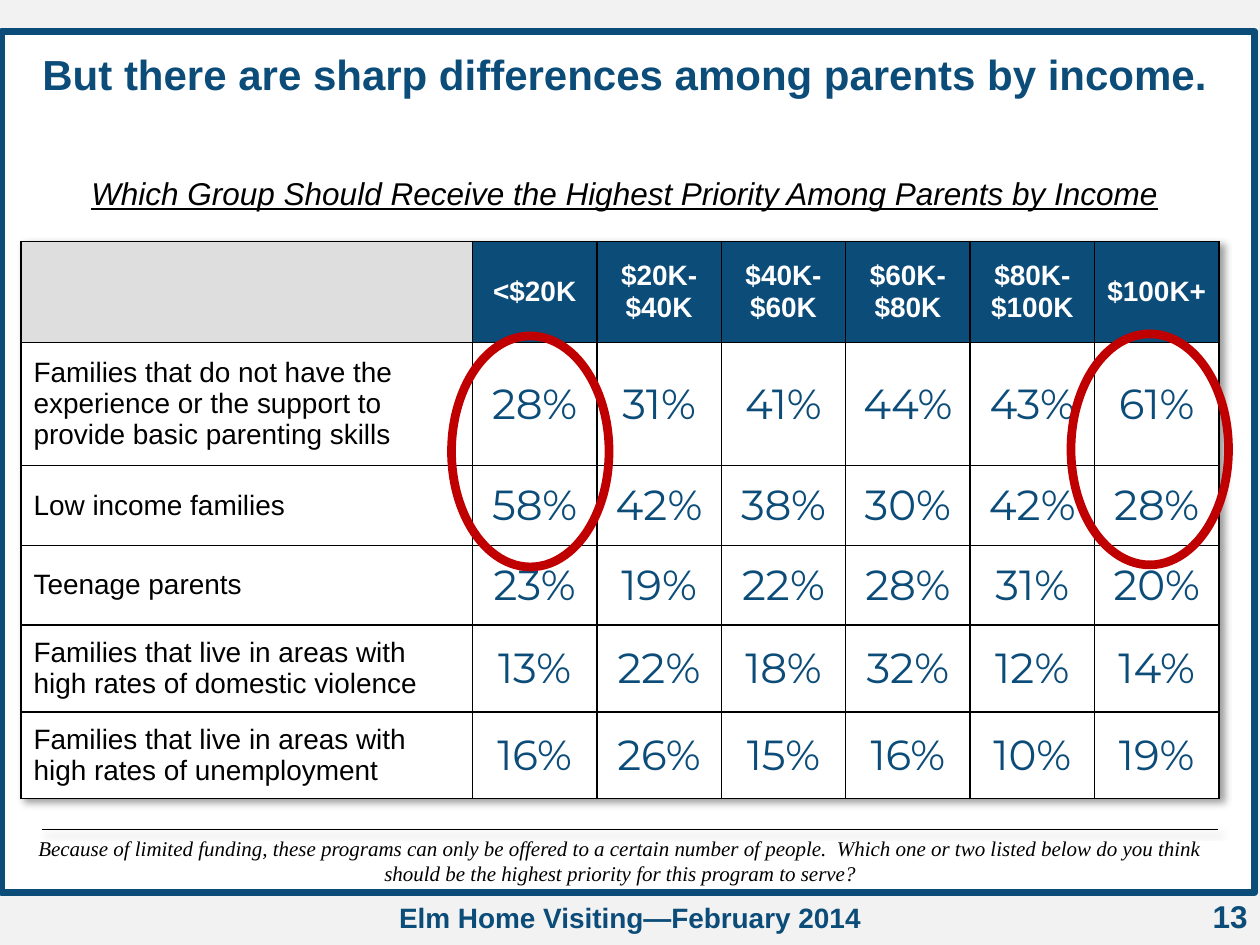
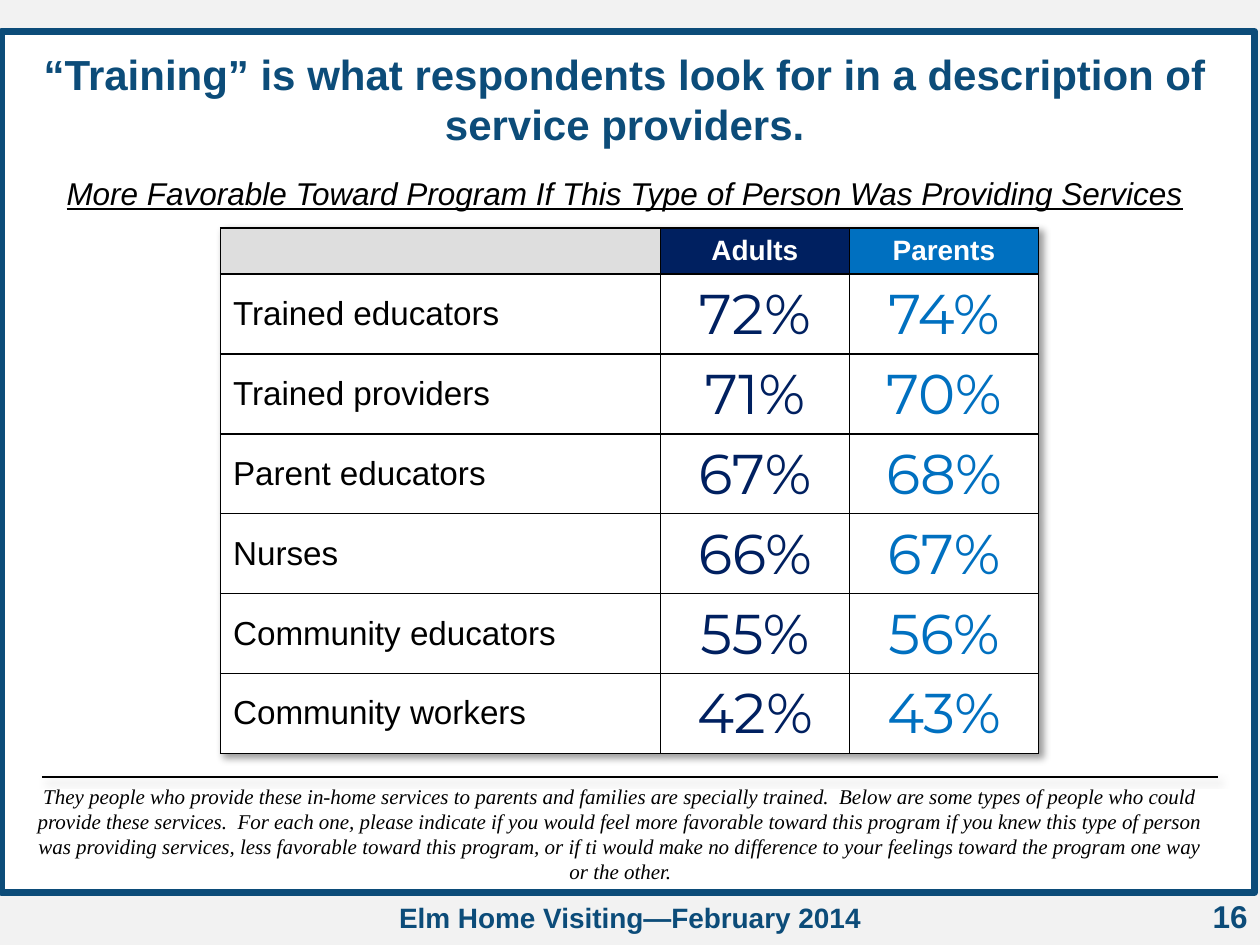
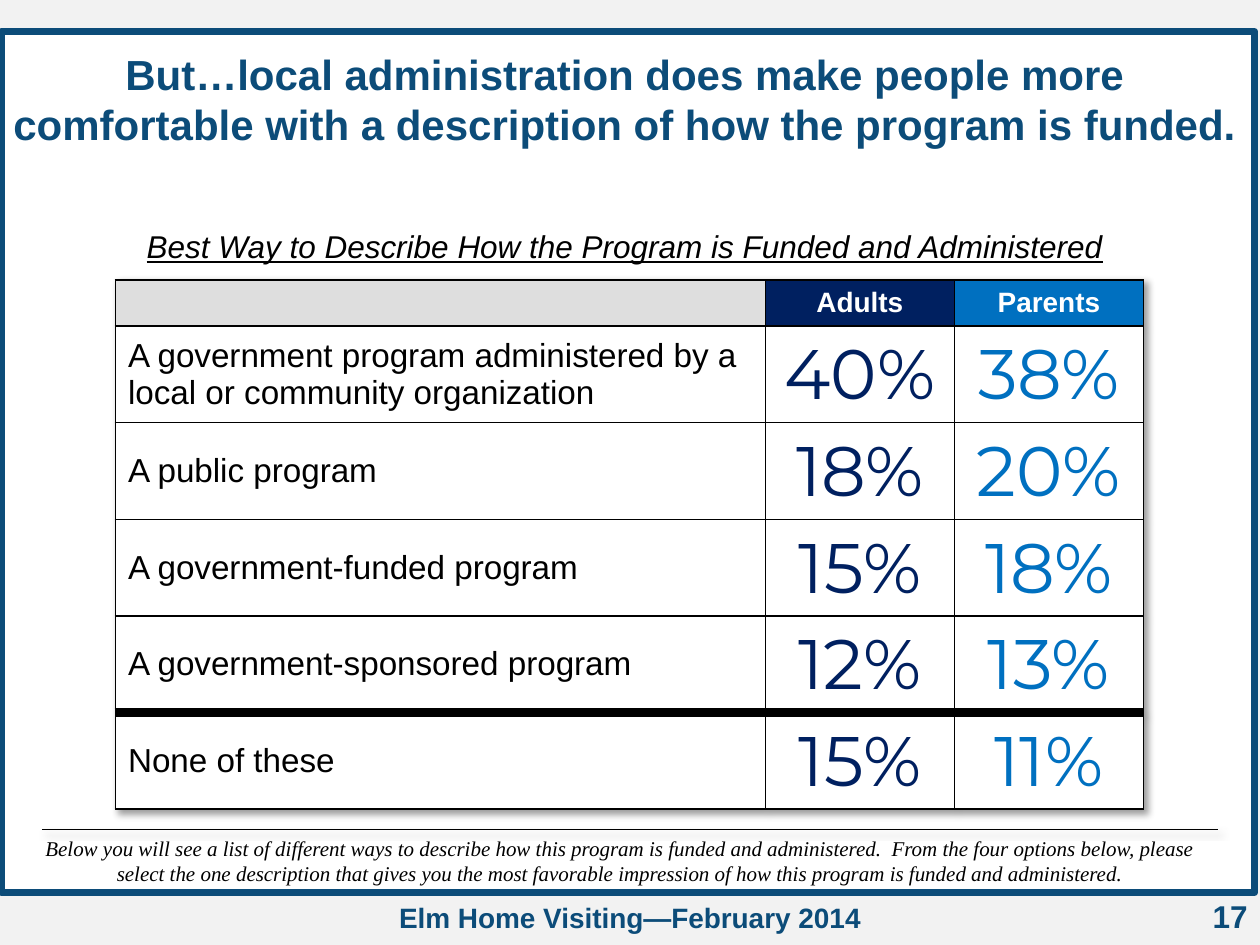
from dataclasses import dataclass
from typing import NamedTuple

from lxml.etree import SubElement
from pptx import Presentation
from pptx.dml.color import RGBColor
from pptx.enum.shapes import MSO_CONNECTOR, MSO_SHAPE
from pptx.enum.text import MSO_ANCHOR, MSO_AUTO_SIZE, PP_ALIGN
from pptx.oxml import parse_xml
from pptx.oxml.ns import nsdecls, qn
from pptx.shapes.base import BaseShape
from pptx.slide import Slide
from pptx.table import _Cell as Cell
from pptx.text.text import TextFrame
from pptx.util import Inches, Pt

GRID_UNIT = Inches(1) / 12
PAGE_COLS, PAGE_ROWS = 120, 90


def grid(units: float) -> int:
    return round(units * GRID_UNIT)


class Style(NamedTuple):
    size: float
    color: str
    face: str = "Arial"
    bold: bool = False
    italic: bool = False
    underline: bool = False
    align: PP_ALIGN = PP_ALIGN.CENTER


class Box(NamedTuple):
    col: float
    row: float
    cols: float
    rows: float

    def lengths(self) -> tuple[int, ...]:
        return tuple(grid(units) for units in self)


@dataclass(frozen=True)
class Theme:
    page: str = "F2F2F2"
    panel: str = "FFFFFF"
    brand: str = "0C4C79"
    corner: str = "DEDEDE"
    ink: str = "000000"
    adults: str = "002060"
    parents: str = "0070C0"
    highlight: str = "C00000"
    frame_line: float = 4
    thin_line: float = 1
    thick_line: float = 6
    ring_line: float = 5
    title: Style = Style(24, "0C4C79", bold=True)
    subtitle: Style = Style(18, "000000", italic=True, underline=True)
    question: Style = Style(12, "000000", "Times New Roman", italic=True)
    footer: Style = Style(16, "0C4C79", bold=True)
    page_number: Style = Style(18, "0C4C79", bold=True, align=PP_ALIGN.RIGHT)
    header: Style = Style(16, "FFFFFF", bold=True)


THEME = Theme()
FOOTER = "Elm Home Visiting—February 2014"
FRAME_BOX = Box(0.1, 3, 119.4, 82)
NUMBER_BOX = Box(92, 84.8, 28, 6.2)
FOOTER_BOX = Box(30.4, 85.2, 59.2, 4.4)


@dataclass(frozen=True)
class Group:
    name: str
    color: str


@dataclass(frozen=True)
class Answer:
    label: str
    shares: tuple[int, ...]


@dataclass(frozen=True)
class Survey:
    col: float
    row: float
    label_cols: float
    group_cols: float
    row_heights: tuple[float, ...]
    label_size: float
    share_size: float
    groups: tuple[Group, ...]
    answers: tuple[Answer, ...]
    last_apart: bool = False


@dataclass(frozen=True)
class Finding:
    number: int
    title: str
    title_rows: float
    subtitle: str
    subtitle_row: float
    question: str
    question_row: float
    question_rows: float
    survey: Survey
    rings: tuple[Box, ...] = ()


INCOMES = tuple(
    Group(name, THEME.brand)
    for name in ("<$20K", "$20K-$40K", "$40K-$60K", "$60K-$80K", "$80K-$100K", "$100K+")
)
AUDIENCES = (Group("Adults", THEME.adults), Group("Parents", THEME.parents))

FINDINGS = (
    Finding(
        13,
        "But there are sharp differences among parents by income.", 6,
        "Which Group Should Receive the Highest Priority Among Parents by Income", 16,
        "Because of limited funding, these programs can only be offered to a certain number "
        "of people.  Which one or two listed below do you think should be the highest "
        "priority for this program to serve?", 79, 6,
        Survey(
            2, 23, 43, 11.85, (9.6, 11.75, 7.6, 7.6, 8.25, 8.25), 16, 24, INCOMES,
            (
                Answer("Families that do not have the experience or the support to provide "
                       "basic parenting skills", (28, 31, 41, 44, 43, 61)),
                Answer("Low income families", (58, 42, 38, 30, 42, 28)),
                Answer("Teenage parents", (23, 19, 22, 28, 31, 20)),
                Answer("Families that live in areas with high rates of domestic violence",
                       (13, 22, 18, 32, 12, 14)),
                Answer("Families that live in areas with high rates of unemployment",
                       (16, 26, 15, 16, 10, 19)),
            ),
        ),
        (Box(43, 32, 15, 22), Box(102, 31.8, 15, 22)),
    ),
    Finding(
        16,
        "“Training” is what respondents look for in a description of service providers.", 10.9,
        "More Favorable Toward Program If This Type of Person Was Providing Services", 16,
        "They people who provide these in-home services to parents and families are specially "
        "trained.  Below are some types of people who could provide these services.  For each "
        "one, please indicate if you would feel more favorable toward this program if you knew "
        "this type of person was providing services, less favorable toward this program, or if "
        "ti would make no difference to your feelings toward the program one way or the other.",
        74, 10.9,
        Survey(
            21, 21.7, 41.9, 18, (4.4,) + (7.6,) * 6, 19, 32, AUDIENCES,
            (
                Answer("Trained educators", (72, 74)),
                Answer("Trained providers", (71, 70)),
                Answer("Parent educators", (67, 68)),
                Answer("Nurses", (66, 67)),
                Answer("Community educators", (55, 56)),
                Answer("Community workers", (42, 43)),
            ),
        ),
    ),
    Finding(
        17,
        "But…local administration does make people more comfortable with a description of how "
        "the program is funded.", 10.9,
        "Best Way to Describe How the Program is Funded and Administered", 21,
        "Below you will see a list of different ways to describe how this program is funded "
        "and administered.  From the four options below, please select the one description "
        "that gives you the most favorable impression of how this program is funded and "
        "administered.", 79, 6,
        Survey(
            11, 26.65, 61.9, 18, (4.4,) + (9.2,) * 5, 19, 40, AUDIENCES,
            (
                Answer("A government program administered by a local or community organization",
                       (40, 38)),
                Answer("A public program", (18, 20)),
                Answer("A government-funded program", (15, 18)),
                Answer("A government-sponsored program", (12, 13)),
                Answer("None of these", (15, 11)),
            ),
            last_apart=True,
        ),
    ),
)


def rgb(color: str) -> RGBColor:
    return RGBColor.from_string(color)


def write(frame: TextFrame, text: str, style: Style) -> None:
    frame.text = text
    paragraph = frame.paragraphs[0]
    paragraph.alignment = style.align
    font = paragraph.font
    font.name, font.size = style.face, Pt(style.size)
    font.bold, font.italic, font.underline = style.bold, style.italic, style.underline
    font.color.rgb = rgb(style.color)


def add_text(slide: Slide, box: Box, text: str, style: Style) -> None:
    frame = slide.shapes.add_textbox(*box.lengths()).text_frame
    frame.word_wrap = True
    write(frame, text, style)


def add_title(slide: Slide, text: str, rows: float) -> None:
    title = slide.shapes.title
    title.left, title.top, title.width, title.height = Box(0, 4, 119, rows).lengths()
    frame = title.text_frame
    frame.auto_size = MSO_AUTO_SIZE.NONE
    frame.vertical_anchor = MSO_ANCHOR.TOP
    write(frame, text, THEME.title)


def add_outline(slide: Slide, preset: MSO_SHAPE, box: Box, color: str, width: float) -> BaseShape:
    outline = slide.shapes.add_shape(preset, *box.lengths())
    outline.shadow.inherit = False
    outline.fill.background()
    outline.line.color.rgb = rgb(color)
    outline.line.width = Pt(width)
    return outline


def add_page_frame(slide: Slide, number: int) -> None:
    frame = add_outline(slide, MSO_SHAPE.ROUNDED_RECTANGLE, FRAME_BOX, THEME.brand, THEME.frame_line)
    frame.adjustments[0] = 0
    frame.fill.solid()
    frame.fill.fore_color.rgb = rgb(THEME.panel)
    slide.shapes.title.element.addprevious(frame.element)
    add_text(slide, NUMBER_BOX, str(number), THEME.page_number)
    add_text(slide, FOOTER_BOX, FOOTER, THEME.footer)


def shadow_effect():
    return parse_xml(
        f'<a:effectLst {nsdecls("a")}><a:outerShdw blurRad="{Pt(4)}" dist="{Pt(3)}" '
        f'dir="2700000" algn="tl" rotWithShape="0"><a:srgbClr val="{THEME.ink}">'
        '<a:alpha val="40000"/></a:srgbClr></a:outerShdw></a:effectLst>'
    )


def add_question(slide: Slide, finding: Finding) -> None:
    row = grid(finding.question_row)
    rule = slide.shapes.add_connector(MSO_CONNECTOR.STRAIGHT, grid(4), row, grid(116), row)
    rule.line.color.rgb = rgb(THEME.ink)
    rule.line.width = Pt(THEME.thin_line)
    rule.element.spPr.append(shadow_effect())
    box = Box(2, finding.question_row, 114.2, finding.question_rows)
    add_text(slide, box, finding.question, THEME.question)


def set_borders(cell: Cell, top: float, bottom: float) -> None:
    properties = cell._tc.get_or_add_tcPr()
    widths = {"L": THEME.thin_line, "R": THEME.thin_line, "T": top, "B": bottom}
    for position, (side, width) in enumerate(widths.items()):
        border = SubElement(properties, qn(f"a:ln{side}"), w=str(Pt(width)))
        fill = SubElement(border, qn("a:solidFill"))
        SubElement(fill, qn("a:srgbClr"), val=THEME.ink)
        properties.insert(position, border)


def fill_cell(cell: Cell, text: str, style: Style, fill: str) -> None:
    cell.fill.solid()
    cell.fill.fore_color.rgb = rgb(fill)
    cell.vertical_anchor = MSO_ANCHOR.MIDDLE
    if not text:
        cell.margin_top = cell.margin_bottom = 0
    write(cell.text_frame, text, style)


def add_survey(slide: Slide, survey: Survey) -> None:
    widths = (survey.label_cols,) + (survey.group_cols,) * len(survey.groups)
    heights = survey.row_heights
    box = Box(survey.col, survey.row, sum(widths), sum(heights))
    table = slide.shapes.add_table(len(heights), len(widths), *box.lengths()).table
    table.first_row = table.horz_banding = False
    table._tbl.tblPr.insert(0, shadow_effect())
    for column, width in zip(table.columns, widths):
        column.width = grid(width)
    for row, height in zip(table.rows, heights):
        row.height = grid(height)

    fill_cell(table.cell(0, 0), "", THEME.header, THEME.corner)
    for c, group in enumerate(survey.groups, 1):
        fill_cell(table.cell(0, c), group.name, THEME.header, group.color)
    label_style = Style(survey.label_size, THEME.ink, align=PP_ALIGN.LEFT)
    for r, answer in enumerate(survey.answers, 1):
        fill_cell(table.cell(r, 0), answer.label, label_style, THEME.panel)
        for c, (group, share) in enumerate(zip(survey.groups, answer.shares), 1):
            share_style = Style(survey.share_size, group.color, "Montserrat")
            fill_cell(table.cell(r, c), f"{share}%", share_style, THEME.panel)

    last = len(heights) - 1
    divider = THEME.thick_line if survey.last_apart else THEME.thin_line
    for r in range(len(heights)):
        top = divider if r == last else THEME.thin_line
        bottom = divider if r == last - 1 else THEME.thin_line
        for c in range(len(widths)):
            set_borders(table.cell(r, c), top, bottom)


def add_finding(slide: Slide, finding: Finding) -> None:
    add_page_frame(slide, finding.number)
    add_title(slide, finding.title, finding.title_rows)
    add_text(slide, Box(0, finding.subtitle_row, 119, 4.8), finding.subtitle, THEME.subtitle)
    add_question(slide, finding)
    add_survey(slide, finding.survey)
    for ring in finding.rings:
        add_outline(slide, MSO_SHAPE.OVAL, ring, THEME.highlight, THEME.ring_line)


def main() -> None:
    deck = Presentation()
    deck.slide_width, deck.slide_height = grid(PAGE_COLS), grid(PAGE_ROWS)
    backdrop = deck.slide_master.background.fill
    backdrop.solid()
    backdrop.fore_color.rgb = rgb(THEME.page)
    title_only = deck.slide_layouts.get_by_name("Title Only")
    for finding in FINDINGS:
        add_finding(deck.slides.add_slide(title_only), finding)
    deck.save("out.pptx")


if __name__ == "__main__":
    main()
